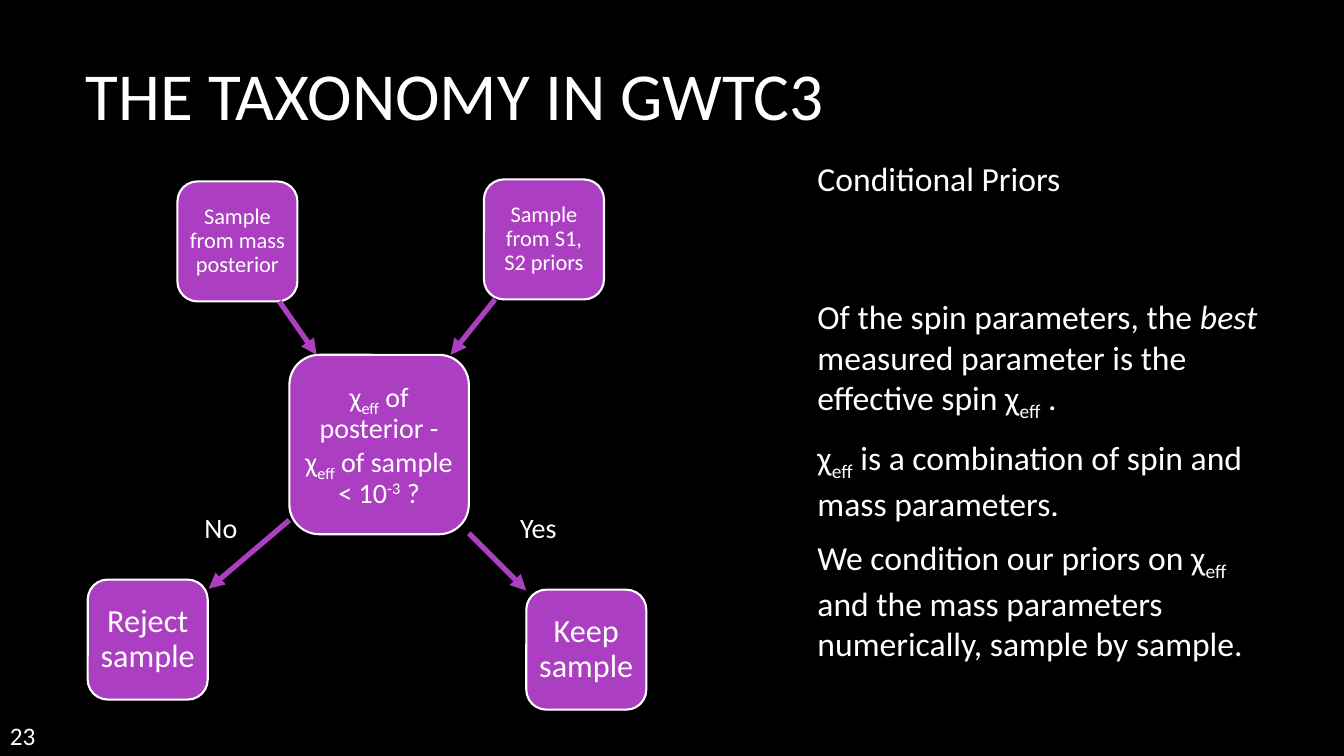
from lxml.etree import SubElement
from pptx import Presentation
from pptx.dml.color import RGBColor
from pptx.enum.shapes import MSO_CONNECTOR as CONN, MSO_SHAPE as SHAPE
from pptx.enum.text import MSO_ANCHOR as ANCHOR, PP_ALIGN as ALIGN
from pptx.oxml.ns import qn
from pptx.util import Inches, Pt

BLACK = RGBColor(0x00, 0x00, 0x00)
WHITE = RGBColor(0xFF, 0xFF, 0xFF)
PURPLE = RGBColor(0xAC, 0x3E, 0xC1)
FONT = "Calibri"
SMALL = 1.19
LARGE = 1.78
STYLES = {"_": ("baseline", "-25000"), "^": ("baseline", "30000"), "/": ("i", "1")}
CHI = "χ|_eff|"
BODY = [
    f"Of the spin parameters, the |/best| measured parameter is the effective spin {CHI} .",
    f"{CHI} is a combination of spin and mass parameters.",
    f"We condition our priors on {CHI} and the mass parameters numerically, sample by sample.",
]
NODES = [
    (2.87, 3.52, LARGE, f"{CHI} of posterior - {CHI} of sample < 10|^-3| ?", 20, 0.06),
    (1.76, 1.8, SMALL, "Sample from mass posterior", 16, 0.04),
    (4.8, 1.78, SMALL, "Sample from S1, S2 priors", 16, 0.04),
    (5.22, 5.85, SMALL, "Keep sample", 23, 0.06),
    (0.87, 5.75, SMALL, "Reject sample", 23, 0.06),
]
ARROWS = [
    (2.77, 2.99, 3.14, 3.52),
    (4.91, 2.97, 4.47, 3.52),
    (4.65, 5.29, 5.22, 5.86),
    (2.87, 5.16, 2.07, 5.84),
]


def write(p, text, size):
    """Write text whose |-separated parts may open with a style mark."""
    p.font.size, p.font.name, p.font.color.rgb = Pt(size), FONT, WHITE
    for part in filter(None, text.split("|")):
        r = p.add_run()
        if part[0] in STYLES:
            r._r.get_or_add_rPr().set(*STYLES[part[0]])
            part = part[1:]
        r.text = part


def add_text(s, x, y, w, h, lines, size, wrap=False, anchor=ANCHOR.TOP):
    """Add a text box with one paragraph per line."""
    tf = s.shapes.add_textbox(Inches(x), Inches(y), Inches(w), Inches(h)).text_frame
    tf.word_wrap, tf.vertical_anchor = wrap, anchor
    for i, line in enumerate(lines):
        p = tf.add_paragraph() if i else tf.paragraphs[0]
        p.space_after = Pt(10 if len(lines) > 1 else 0)
        write(p, line, size)


def add_node(s, x, y, side, text, size, inset):
    """Add a square rounded step of the flow chart."""
    sp = s.shapes.add_shape(SHAPE.ROUNDED_RECTANGLE, Inches(x), Inches(y), Inches(side), Inches(side))
    sp.shadow.inherit = False
    sp.fill.solid()
    sp.fill.fore_color.rgb = PURPLE
    sp.line.color.rgb, sp.line.width = WHITE, Pt(1.5)
    tf = sp.text_frame
    tf.word_wrap, tf.vertical_anchor = True, ANCHOR.MIDDLE
    tf.margin_left = tf.margin_right = tf.margin_top = tf.margin_bottom = Inches(inset)
    p = tf.paragraphs[0]
    p.alignment, p.line_spacing = ALIGN.CENTER, 0.9
    write(p, text, size)


def add_arrow(s, *ends):
    """Add an arrow between two points."""
    c = s.shapes.add_connector(CONN.STRAIGHT, *map(Inches, ends))
    c.line.color.rgb, c.line.width = PURPLE, Pt(3.75)
    SubElement(c.line._get_or_add_ln(), qn("a:tailEnd"), type="triangle")
    SubElement(c._element.spPr, qn("a:effectLst"))


def add_title(s, x, y, w, h, text):
    """Place and fill the title placeholder."""
    sp = s.shapes.title
    sp.left, sp.top, sp.width, sp.height = map(Inches, (x, y, w, h))
    tf = sp.text_frame
    tf.vertical_anchor = ANCHOR.MIDDLE
    tf.paragraphs[0].alignment = ALIGN.LEFT
    write(tf.paragraphs[0], text, 48)


def add_flow(s, x, y):
    """Draw the rejection sampling flow chart, offset by x and y."""
    for left, top, *rest in NODES:
        add_node(s, x + left, y + top, *rest)
    for x1, y1, x2, y2 in ARROWS:
        add_arrow(s, x + x1, y + y1, x + x2, y + y2)
    add_text(s, x + 5.06, y + 5.02, 0.57, 0.44, ["Yes"], 20)
    add_text(s, x + 1.93, y + 5.02, 0.53, 0.44, ["No"], 20)


def add_priors(s, x, y, w, h):
    """Add the heading and the explanation below it."""
    add_text(s, x, y, 2.63, 0.5, ["Conditional Priors"], 24)
    add_text(s, x, y + 0.5, w, h - 0.5, BODY, 24, True, ANCHOR.MIDDLE)


def main():
    """Build and save the slide."""
    prs = Presentation()
    prs.slide_width, prs.slide_height = Inches(13.33), Inches(7.5)
    s = prs.slides.add_slide(prs.slide_layouts[5])
    s.background.fill.solid()
    s.background.fill.fore_color.rgb = BLACK
    add_title(s, 0.75, 0.13, 11.08, 1.59, "THE TAXONOMY IN GWTC3")
    add_flow(s, 0, 0)
    add_priors(s, 8.01, 1.52, 4.8, 5.98)
    add_text(s, 0, 7.1, 0.46, 0.4, ["23"], 18)
    prs.save("out.pptx")


if __name__ == "__main__":
    main()
